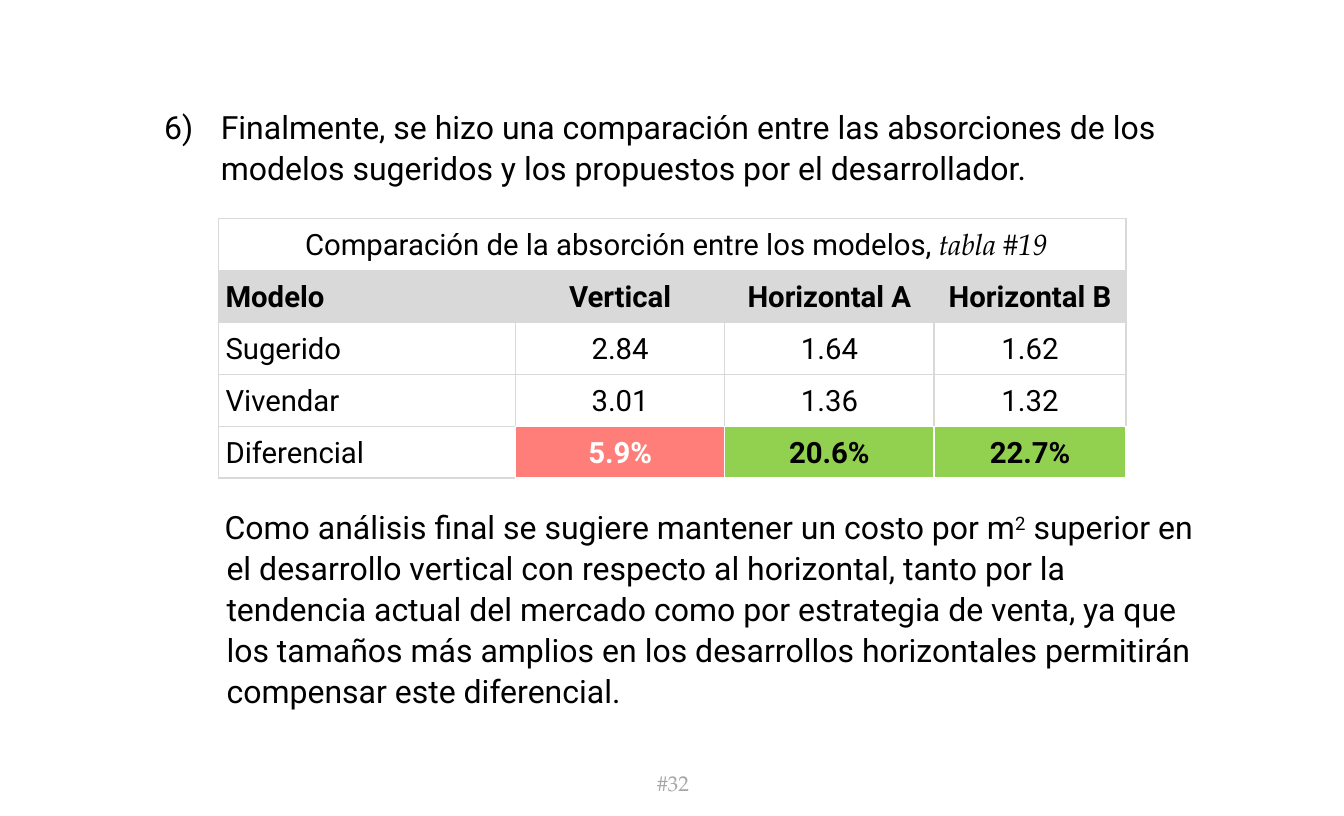
from lxml import etree
from pptx import Presentation
from pptx import util as u
from pptx.dml.color import RGBColor
from pptx.enum import text as t
from pptx.oxml import ns

BLACK = RGBColor(0x00, 0x00, 0x00)
WHITE = RGBColor(0xFF, 0xFF, 0xFF)
GREY = RGBColor(0xD9, 0xD9, 0xD9)
DIM = RGBColor(0xA6, 0xA6, 0xA6)
RED = RGBColor(0xFF, 0x7E, 0x79)
GREEN = RGBColor(0x92, 0xD0, 0x50)
SANS, SERIF = "Roboto", "TeX Gyre Pagella"
LEFT, MID = t.PP_ALIGN.LEFT, t.PP_ALIGN.CENTER
BODY = {"line_spacing": 1.07, "space_after": u.Pt(8)}
PADS = ("margin_left", "margin_top", "margin_right", "margin_bottom")

TITLE = [
    (" ", {"name": SERIF, "italic": True}),
    ("Comparación de la absorción entre los modelos,", {}),
    (" tabla #19", {"name": SERIF, "italic": True}),
]
ROWS = [
    ("Modelo", "Vertical", "Horizontal A", "Horizontal B"),
    ("Sugerido", "2.84", "1.64", "1.62"),
    ("Vivendar", "3.01", "1.36", "1.32"),
    ("Diferencial", "5.9%", "20.6%", "22.7%"),
]
WIDTHS = (3.09, 2.18, 2.18, 2)
HIGH = 0.54
LAST = len(ROWS)


def apply(item, style):
    for key, value in style.items():
        setattr(item, key, value)


def pad(item, sizes):
    apply(item, dict(zip(PADS, map(u.Inches, sizes))))


def write(para, runs, size, color=BLACK, name=SANS, **style):
    apply(para, style)
    for words, look in runs:
        run = para.add_run()
        run.text = words
        look = dict(look)
        base = look.pop("base", None)
        apply(run.font, {"size": u.Pt(size), "name": name, **look})
        run.font.color.rgb = color
        if base:
            run.font._element.set("baseline", str(base))


def add_text(slide, box, sizes, runs, size, anchor=t.MSO_ANCHOR.TOP,
             indent=0, **style):
    frame = slide.shapes.add_textbox(*map(u.Inches, box)).text_frame
    apply(frame, {"word_wrap": True, "vertical_anchor": anchor})
    pad(frame, sizes)
    para = frame.paragraphs[0]
    if indent:
        props = para._p.get_or_add_pPr()
        props.set("marL", str(u.Inches(indent)))
        props.set("indent", str(-u.Inches(indent)))
    write(para, runs, size, **style)


def is_hot(row, col):
    return row == LAST and col > 0


def set_edges(cell, row, col):
    props = cell._tc.get_or_add_tcPr()
    sides = {"lnL": (0, -1), "lnR": (0, 1), "lnT": (-1, 0), "lnB": (1, 0)}
    for spot, (tag, (down, right)) in enumerate(sides.items()):
        hot = is_hot(row, col) or is_hot(row + down, col + right)
        line = etree.Element(ns.qn("a:" + tag), w=str(u.Pt(1)))
        fill = etree.SubElement(line, ns.qn("a:solidFill"))
        tint = WHITE if hot else GREY
        etree.SubElement(fill, ns.qn("a:srgbClr"), val=str(tint))
        props.insert(spot, line)


def set_fill(cell, row, col):
    if is_hot(row, col):
        tint = RED if col == 1 else GREEN
    else:
        tint = {0: WHITE, 1: GREY}.get(row)
    if tint is None:
        cell.fill.background()
    else:
        cell.fill.solid()
        cell.fill.fore_color.rgb = tint


def add_grid(slide):
    box = map(u.Inches, (2.28, 2.28, sum(WIDTHS), HIGH * (LAST + 1)))
    grid = slide.shapes.add_table(LAST + 1, len(WIDTHS), *box).table
    apply(grid, {"first_row": False, "horz_banding": False})
    for col, wide in zip(grid.columns, WIDTHS):
        col.width = u.Inches(wide)
    for line in grid.rows:
        line.height = u.Inches(HIGH)
    grid.cell(0, 0).merge(grid.cell(0, len(WIDTHS) - 1))
    for row in range(LAST + 1):
        for col in range(len(WIDTHS)):
            cell = grid.cell(row, col)
            set_fill(cell, row, col)
            set_edges(cell, row, col)
            pad(cell, (0.07, 0, 0.07, 0))
            cell.vertical_anchor = t.MSO_ANCHOR.MIDDLE
            if row:
                bold = row == 1 or is_hot(row, col)
                runs = [(ROWS[row - 1][col], {"bold": bold})]
            else:
                runs = [] if col else TITLE
            color = WHITE if is_hot(row, col) and col == 1 else BLACK
            align = MID if col or not row else LEFT
            write(cell.text_frame.paragraphs[0], runs, 22, color,
                  alignment=align, **BODY)


def main():
    deck = Presentation()
    apply(deck, {"slide_width": u.Inches(14), "slide_height": u.Inches(8.5)})
    slide = deck.slides.add_slide(deck.slide_layouts[6])
    inset = (0.14, 0.07, 0.14, 0.07)
    add_text(slide, (6.51, 8.04, 0.98, 0.26), (0.12, 0.02, 0.1, 0.05),
             [("#32", {})], 16, t.MSO_ANCHOR.MIDDLE,
             color=DIM, name=SERIF, alignment=MID)
    add_text(slide, (1.57, 1.02, 11.5, 0.98), inset, [
        ("6)\tFinalmente, se hizo una comparación entre las absorciones de "
         "los modelos sugeridos y los propuestos por el desarrollador.", {}),
    ], 24, indent=0.59, **BODY)
    add_grid(slide)
    add_text(slide, (2.2, 5.19, 10.47, 2.27), inset, [
        ("Como análisis final se sugiere mantener un costo por m", {}),
        ("2", {"base": 30000}),
        (" superior en el desarrollo vertical con respecto al horizontal, "
         "tanto por la tendencia actual del mercado como por estrategia de "
         "venta, ya que los tamaños más amplios en los desarrollos "
         "horizontales permitirán compensar este diferencial.", {}),
    ], 24, indent=0.02, **BODY)
    deck.save("out.pptx")


if __name__ == "__main__":
    main()
